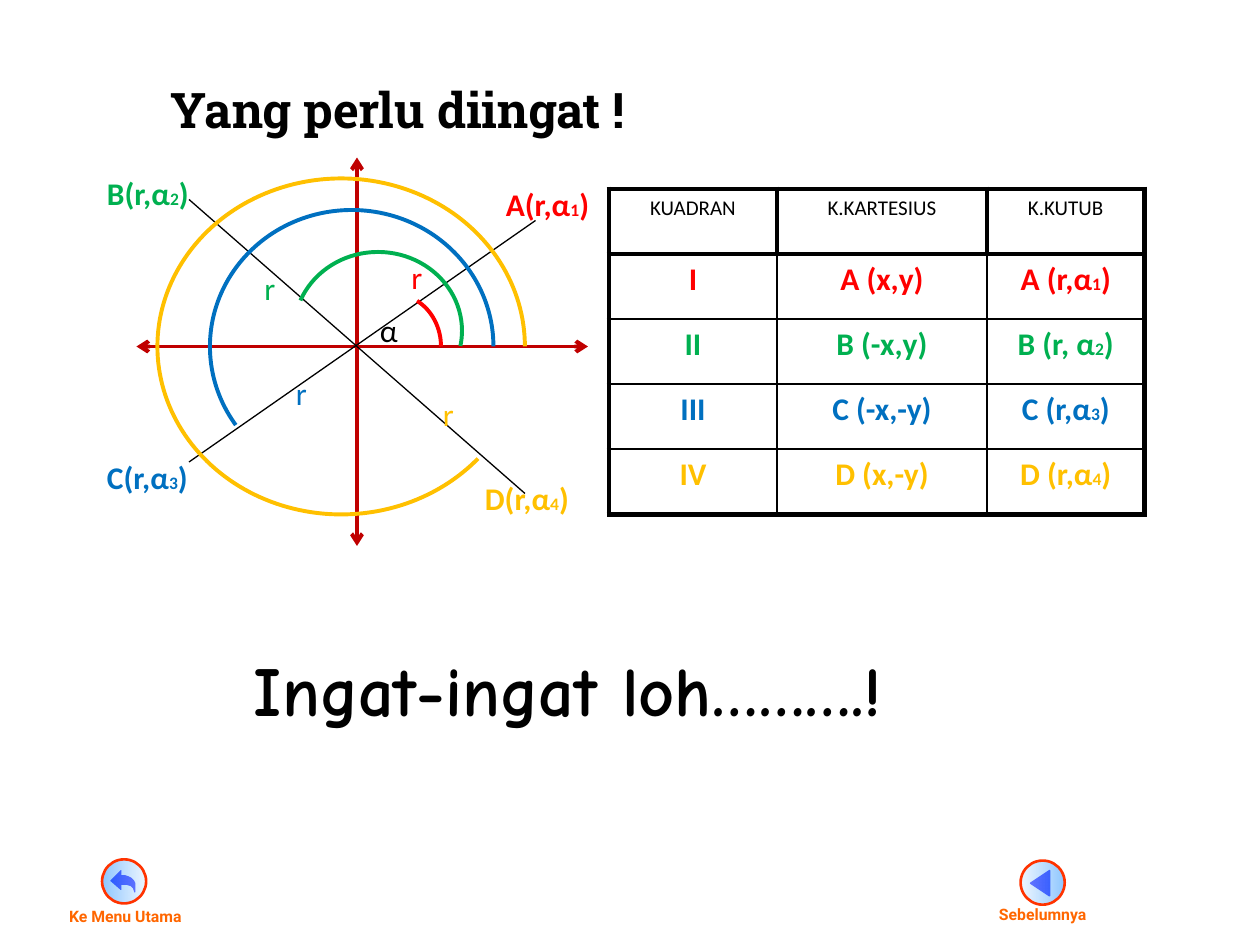
"""Build the slide on quadrants, Cartesian and polar coordinates."""
from itertools import product

from lxml.etree import SubElement
from pptx import Presentation
from pptx.dml.color import RGBColor
from pptx.enum.shapes import MSO_CONNECTOR as LINK, MSO_SHAPE as SHAPE
from pptx.enum.text import MSO_ANCHOR as ANCHOR, MSO_AUTO_SIZE as AUTO, PP_ALIGN as ALIGN
from pptx.oxml.ns import qn
from pptx.util import Inches, Pt

BLACK, MAROON, RED, GREEN, BLUE, GOLD = "000000", "C00000", "FF0000", "00B050", "0070C0", "FFC000"
INK, RIM, CAPTION = "0000FF", "FF3300", "FF6600"


def paint(fill, color):
    fill.solid()
    fill.fore_color.rgb = RGBColor.from_string(color)


def write(frame, *parts, size=18, color=BLACK, font="Calibri", bold=False,
          align=ALIGN.LEFT, anchor=ANCHOR.TOP, wrap=False):
    frame.word_wrap = wrap
    frame.vertical_anchor = anchor
    paragraph = frame.paragraphs[0]
    paragraph.alignment = align
    for index, part in enumerate(parts):
        run = paragraph.add_run()
        run.text = part
        run.font.name, run.font.bold = font, bold
        run.font.size = Pt(10 if index % 2 else size)
        paint(run.font.fill, color)


deck = Presentation()
deck.slide_width, deck.slide_height = Inches(10), Inches(7.5)
unit = deck.slide_width // 120
slide = deck.slides.add_slide(deck.slide_layouts[5])
shapes = slide.shapes

heading = shapes.title
heading.left, heading.top, heading.width, heading.height = [int(n * unit) for n in (15, 7, 49.3, 6.8)]
heading.text_frame.auto_size = AUTO.NONE
write(heading.text_frame, "Yang perlu diingat !", size=28, font="Roboto Slab", bold=True)

for start_x, start_y, end_x, end_y, color, width, arrows in (
    (34, 15, 34, 52, MAROON, 2.25, True),
    (13, 33, 56, 33, MAROON, 2.25, True),
    (18, 19, 50, 47, BLACK, 0.75, False),
    (51, 21, 18, 44, BLACK, 0.75, False),
):
    ray = shapes.add_connector(LINK.STRAIGHT, *[n * unit for n in (start_x, start_y, end_x, end_y)])
    ray.line.width = Pt(width)
    paint(ray.line.fill, color)
    if arrows:
        stroke = ray.line._get_or_add_ln()
        for end in ("a:headEnd", "a:tailEnd"):
            SubElement(stroke, qn(end), type="arrow")
    SubElement(ray._element.spPr, qn("a:effectLst"))

for box, start, end, color in (
    ((28, 24, 16, 15), 120.78, 6.29, GREEN),
    ((33, 28, 9, 10), 178.25, 0, RED),
    ((20, 20, 27, 26), 87.52, 0, BLUE),
    ((15, 17, 35, 32), 23.61, 0, GOLD),
):
    sweep = shapes.add_shape(SHAPE.ARC, *[n * unit for n in box])
    sweep.adjustments[0], sweep.adjustments[1] = start, end
    sweep.shadow.inherit = False
    sweep.fill.background()
    sweep.line.width = Pt(2.25)
    paint(sweep.line.fill, color)

for column, row, width, parts, color in (
    (27, 35, 3.5, ["r"], BLUE),
    (38, 24, 3.5, ["r"], RED),
    (41, 37, 3.5, ["r"], GOLD),
    (24, 25, 3.5, ["r"], GREEN),
    (35, 29, 4.2, ["α"], BLACK),
    (47, 17, 10.4, ["A(r,α", "1", ")"], RED),
    (9, 16, 10.4, ["B(r,α", "2", ")"], GREEN),
    (45, 45, 10.4, ["D(r,α", "4", ")"], GOLD),
    (9, 43, 10.4, ["C(r,α", "3", ")"], BLUE),
):
    label = shapes.add_textbox(column * unit, row * unit, int(width * unit), int(4.8 * unit))
    write(label.text_frame, *parts, color=color, bold=len(parts) > 1)

quadrants = (
    (BLACK, ["KUADRAN"], ["K.KARTESIUS"], ["K.KUTUB"]),
    (RED, ["I"], ["A (x,y)"], ["A (r,α", "1", ")"]),
    (GREEN, ["II"], ["B (-x,y)"], ["B (r, α", "2", ")"]),
    (BLUE, ["III"], ["C (-x,-y)"], ["C (r,α", "3", ")"]),
    (GOLD, ["IV"], ["D (x,-y)"], ["D (r,α", "4", ")"]),
)
table = shapes.add_table(5, 3, 58 * unit, 18 * unit, 51 * unit, 31 * unit).table
table.first_row = table.horz_banding = False
for column, width in zip(table.columns, (16, 20, 15)):
    column.width = width * unit
for row, column in product(range(5), range(3)):
    color, *entries = quadrants[row]
    cell = table.cell(row, column)
    write(cell.text_frame, *entries[column], size=18 if row else 12, color=color,
          bold=row > 0, align=ALIGN.CENTER, wrap=True)
    thick = {"a:lnL": column == 0, "a:lnR": column == 2, "a:lnT": row == 1, "a:lnB": row == 4}
    properties = cell._tc.get_or_add_tcPr()
    for side, heavy in thick.items():
        edge = SubElement(properties, qn(side), w=str(Pt(3 if heavy or row == 0 else 1.5)))
        SubElement(SubElement(edge, qn("a:solidFill")), qn("a:srgbClr"), val=BLACK)
    cell.fill.background()

reminder = shapes.add_textbox(23 * unit, 61 * unit, int(70.8 * unit), int(9.2 * unit))
write(reminder.text_frame, "Ingat-ingat loh……….!", size=40, font="Comic Neue", bold=True)

triangle = ((818, 701), (833, 711), (833, 691))
return_arrow = ((96, 695), (99, 695), (102, 696), (104, 697), (106, 699), (107, 701), (107, 708),
                (106, 705), (104, 703), (101, 702), (96, 702), (96, 706), (88, 699), (96, 691))
light, deep = ("DFEFFF", 51), ("3399FF", 56)
for glyph, weight, left, top, stops, caption, caption_left, caption_top, caption_width in (
    (triangle, 0.88, 8.1, 6.83, (light, deep), "Sebelumnya", 7.83, 7.13, 0.91),
    (return_arrow, 0.63, 0.81, 6.82, (deep, light), "Ke Menu Utama", 0.45, 7.15, 1.12),
):
    button = shapes.add_group_shape().shapes
    outline = button.build_freeform(*glyph[0], scale=Inches(0.01))
    symbol = outline.add_line_segments(glyph[1:], close=True).convert_to_shape()
    paint(symbol.fill, INK)
    paint(symbol.line.fill, INK)
    symbol.line.width = Pt(weight)
    disc = button.add_shape(SHAPE.OVAL, Inches(left), Inches(top), Inches(0.35), Inches(0.35))
    disc.fill.gradient()
    disc.fill.gradient_angle = 0
    for stop, (color, opacity) in zip(disc.fill.gradient_stops, stops):
        stop.color.rgb = RGBColor.from_string(color)
    gradient = disc._element.spPr.find(qn("a:gradFill"))
    for tint, (color, opacity) in zip(gradient.iter(qn("a:srgbClr")), stops):
        SubElement(tint, qn("a:alpha"), val=str(opacity * 1000))
    paint(disc.line.fill, RIM)
    disc.line.width = Pt(1.5)
    symbol.shadow.inherit = disc.shadow.inherit = False
    name = button.add_textbox(Inches(caption_left), Inches(caption_top), Inches(caption_width), Inches(0.25))
    write(name.text_frame, caption, size=9, color=CAPTION, font="Roboto", bold=True)

deck.save("out.pptx")
